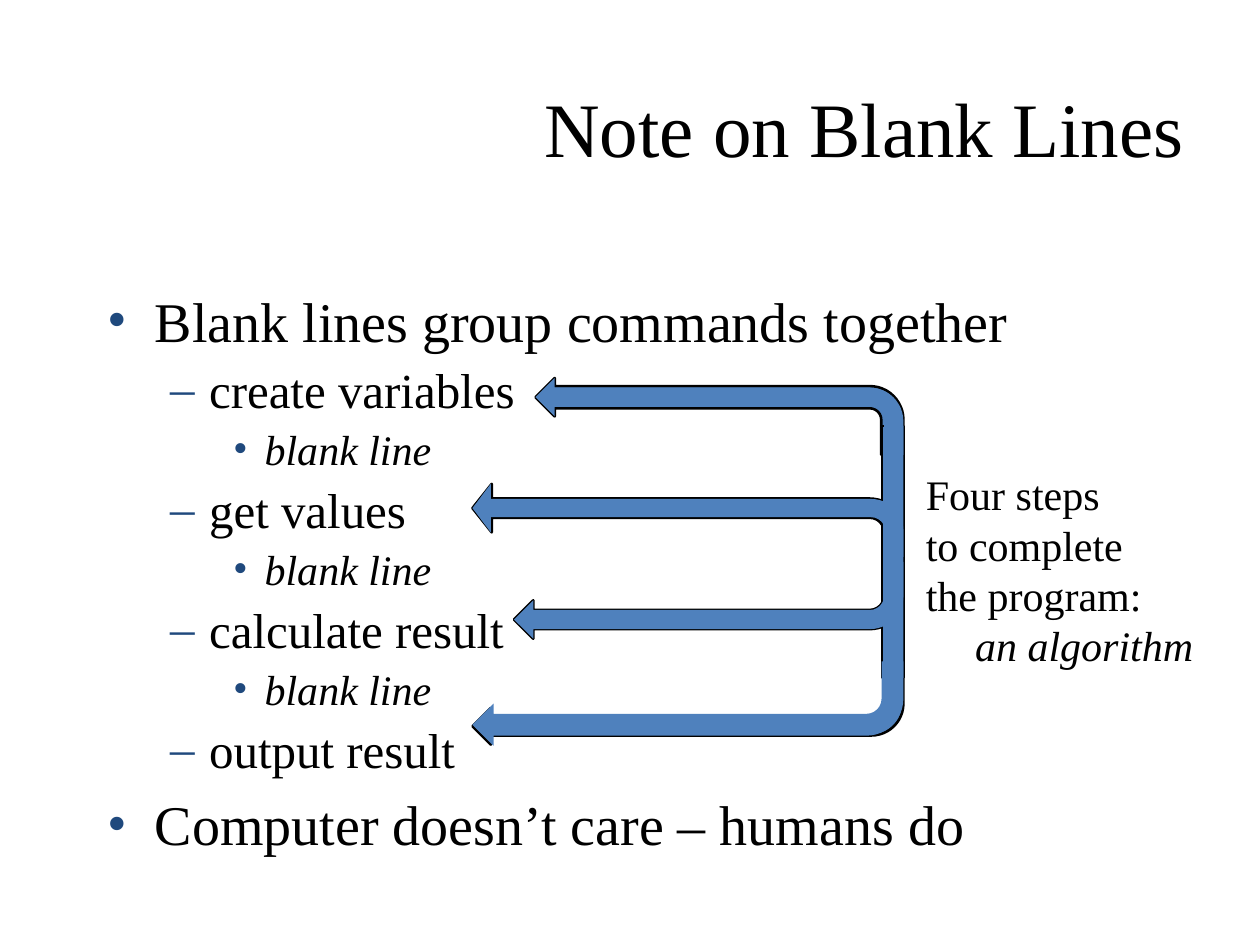
from lxml.etree import SubElement
from pptx import Presentation
from pptx.dml.color import RGBColor
from pptx.enum.shapes import MSO_SHAPE
from pptx.enum.text import MSO_ANCHOR, MSO_AUTO_SIZE, PP_ALIGN
from pptx.oxml.ns import qn
from pptx.util import Inches, Pt

COLORS = {"ink": "000000", "bullet": "1F497D", "arrow": "4F81BD"}
LEVELS = [
    {"size": 32, "indent": 0.38, "hang": 0.38, "before": 6.4, "mark": "•", "italic": False},
    {"size": 28, "indent": 0.81, "hang": 0.31, "before": 3.4, "mark": "–", "italic": False},
    {"size": 24, "indent": 1.25, "hang": 0.25, "before": 2.9, "mark": "•", "italic": True},
]
POINTS = [
    (0, "Blank lines group commands together"),
    (1, "create variables"),
    (2, "blank line"),
    (1, "get values"),
    (2, "blank line"),
    (1, "calculate result"),
    (2, "blank line"),
    (1, "output result"),
    (0, "Computer doesn’t care – humans do"),
]
OUTLINED_ARROWS = [
    (3.75, 3.84, 0.61, False, 0.25, 0.316),
    (4.25, 3, 0.61, False, 0.288, 0.25),
    (4.08, 4.46, 0.61, True, 0.25, 0.25),
    (3.75, 5.33, 0.58, True, 0.25, 0.25),
]
PLAIN_ARROWS = [
    (4.25, 3, 0.61, False, 0.25, 0.25),
    (3.75, 3.84, 0.58, False, 0.25, 0.332),
    (4.08, 4.46, 0.61, True, 0.25, 0.25),
    (3.75, 5.25, 0.67, True, 0.259, 0.25),
]
STEPS = [
    [("Four steps", False)],
    [("to complete", False)],
    [("the program:", False)],
    [("\t", False), ("an algorithm", True)],
]
RIGHT_EDGE = 7.17


class SlideBuilder:
    """Holds the style and the current slide, and adds each kind of element."""

    def __init__(self, slide, font="Times New Roman"):
        self.slide = slide
        self.font = font

    def color(self, name):
        return RGBColor.from_string(COLORS[name])

    def place(self, shape, left, top, width, height):
        shape.left, shape.top = Inches(left), Inches(top)
        shape.width, shape.height = Inches(width), Inches(height)

    def run(self, paragraph, text, size, italic=False):
        run = paragraph.add_run()
        run.text = text
        run.font.name = self.font
        run.font.size = Pt(size)
        run.font.italic = italic
        run.font.color.rgb = self.color("ink")

    def title(self, text, *box):
        title = self.slide.shapes.title
        self.place(title, *box)
        frame = title.text_frame
        frame.auto_size = MSO_AUTO_SIZE.NONE
        frame.vertical_anchor = MSO_ANCHOR.BOTTOM
        frame.paragraphs[0].alignment = PP_ALIGN.RIGHT
        self.run(frame.paragraphs[0], text, 44)

    def bullet(self, paragraph, style):
        properties = paragraph._p.get_or_add_pPr()
        properties.set("marL", str(Inches(style["indent"])))
        properties.set("indent", str(-Inches(style["hang"])))
        bullet_color = SubElement(properties, qn("a:buClr"))
        SubElement(bullet_color, qn("a:srgbClr"), val=COLORS["bullet"])
        SubElement(properties, qn("a:buFont"), typeface=self.font)
        SubElement(properties, qn("a:buChar"), char=style["mark"])

    def bullets(self, points, *box):
        body = self.slide.placeholders[1]
        self.place(body, *box)
        frame = body.text_frame
        frame.auto_size = MSO_AUTO_SIZE.NONE
        frame.margin_top = Inches(0.1)
        for index, (level, text) in enumerate(points):
            paragraph = frame.add_paragraph() if index else frame.paragraphs[0]
            style = LEVELS[level]
            paragraph.level = level
            self.bullet(paragraph, style)
            paragraph.space_before = Pt(style["before"] if index else 0)
            self.run(paragraph, text, style["size"], style["italic"])

    def block(self, preset, left, top, width, height, outlined):
        block = self.slide.shapes.add_shape(
            preset, Inches(left), Inches(top), Inches(width), Inches(height))
        block.shadow.inherit = False
        block.fill.solid()
        block.fill.fore_color.rgb = self.color("arrow")
        if outlined:
            block.line.color.rgb = self.color("ink")
            block.line.width = Pt(1.5)
        else:
            block.line.fill.background()
        return block

    def arrow(self, left, top, height, upside_down, shaft, head, outlined):
        arrow = self.block(MSO_SHAPE.BENT_ARROW, left, top, RIGHT_EDGE - left, height, outlined)
        for index, value in enumerate((shaft, head, 0.25, 0.438)):
            arrow.adjustments[index] = value
        frame = arrow._element.spPr.find(qn("a:xfrm"))
        frame.set("flipH", "1")
        if upside_down:
            frame.set("flipV", "1")

    def bracket(self, arrows, stem_width, outlined):
        for arrow in arrows:
            self.arrow(*arrow, outlined)
        self.block(MSO_SHAPE.RECTANGLE, RIGHT_EDGE - stem_width, 3.38, stem_width, 2, outlined)

    def note(self, lines, left, top, width, height):
        note = self.slide.shapes.add_textbox(
            Inches(left), Inches(top), Inches(width), Inches(height))
        frame = note.text_frame
        frame.word_wrap = False
        frame.auto_size = MSO_AUTO_SIZE.SHAPE_TO_FIT_TEXT
        for index, line in enumerate(lines):
            paragraph = frame.add_paragraph() if index else frame.paragraphs[0]
            tabs = SubElement(paragraph._p.get_or_add_pPr(), qn("a:tabLst"))
            SubElement(tabs, qn("a:tab"), pos=str(Inches(0.39)), algn="l")
            for text, italic in line:
                self.run(paragraph, text, 24, italic)


def main():
    deck = Presentation()
    deck.slide_width, deck.slide_height = Inches(10), Inches(7.5)
    builder = SlideBuilder(deck.slides.add_slide(deck.slide_layouts[1]))
    builder.title("Note on Blank Lines", 0.5, 0.3, 9, 1.12)
    builder.bullets(POINTS, 0.75, 2.17, 8.5, 4.67)
    builder.bracket(OUTLINED_ARROWS, 0.17, True)
    builder.bracket(PLAIN_ARROWS, 0.08, False)
    builder.note(STEPS, 7.25, 3.67, 2.34, 1.58)
    deck.save("out.pptx")


if __name__ == "__main__":
    main()
